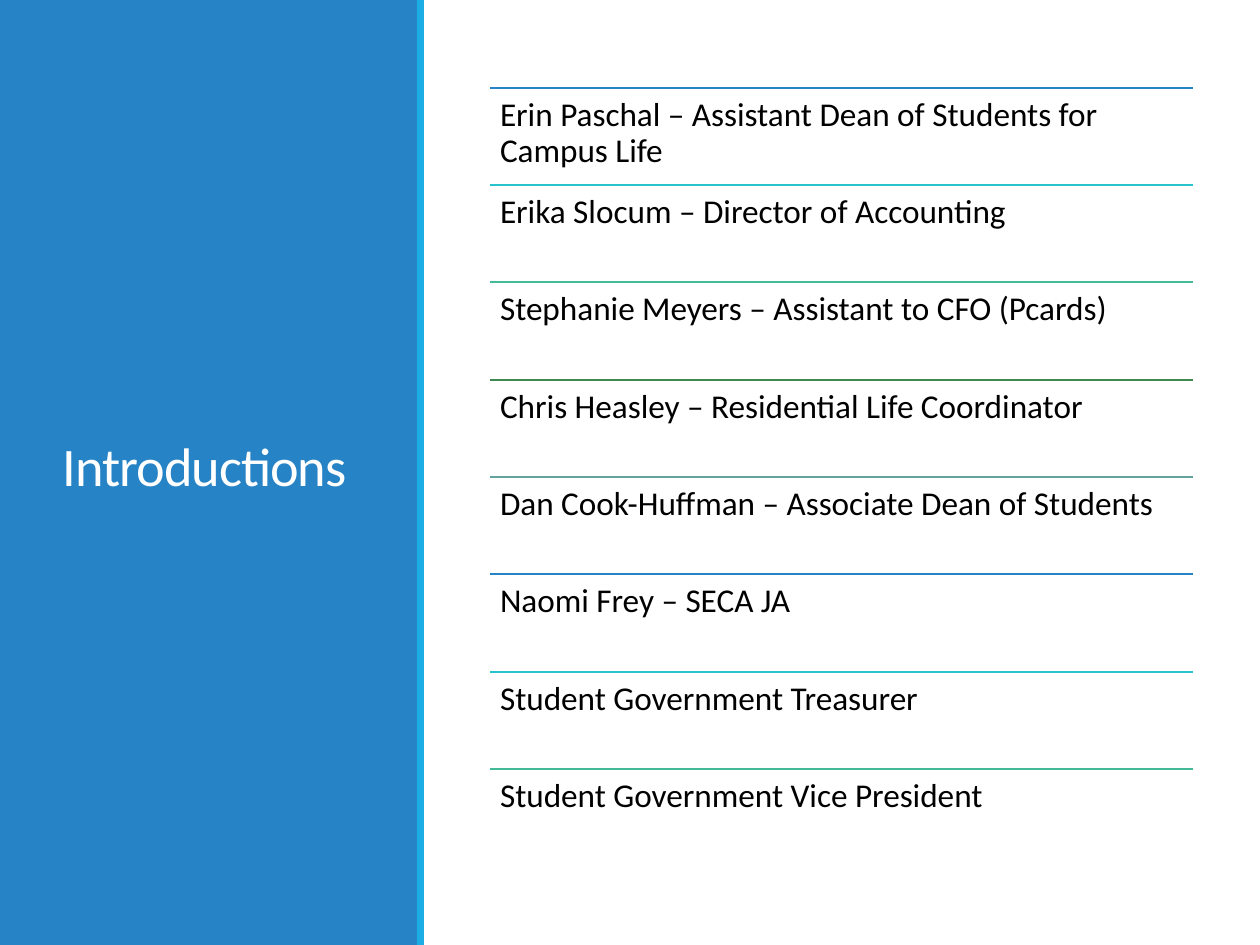
from lxml import etree
from pptx import Presentation
from pptx.dml.color import RGBColor
from pptx.enum.shapes import MSO_CONNECTOR, MSO_SHAPE
from pptx.enum.text import MSO_ANCHOR
from pptx.oxml.ns import qn
from pptx.util import Pt

RECTANGLE = MSO_SHAPE.RECTANGLE
STRAIGHT = MSO_CONNECTOR.STRAIGHT
TOP = MSO_ANCHOR.TOP
MIDDLE = MSO_ANCHOR.MIDDLE

PX = 914400 // 126
SLIDE_WIDTH, SLIDE_HEIGHT = 1260, 945
LIST_LEFT, LIST_TOP, LIST_WIDTH, LIST_HEIGHT = 490, 88, 703, 779

THEME = {
    "font": "Calibri",
    "title_size": Pt(31),
    "person_size": Pt(19),
    "rule_width": Pt(1.25),
    "panel": RGBColor.from_string("2683C6"),
    "stripe": RGBColor.from_string("1CADE4"),
    "title": RGBColor.from_string("FFFFFF"),
    "person": RGBColor.from_string("000000"),
    "rules": [RGBColor.from_string(code)
              for code in ("2683C6", "28C4CC", "42BA97", "3E8853", "62A39F")],
}

PEOPLE = [
    "Erin Paschal – Assistant Dean of Students for Campus Life",
    "Erika Slocum – Director of Accounting",
    "Stephanie Meyers – Assistant to CFO (Pcards)",
    "Chris Heasley – Residential Life Coordinator",
    "Dan Cook-Huffman – Associate Dean of Students",
    "Naomi Frey – SECA JA",
    "Student Government Treasurer",
    "Student Government Vice President",
]


def add_text(shapes, text, box, role, line_spacing, anchor):
    text_box = shapes.add_textbox(*(length * PX for length in box))
    frame = text_box.text_frame
    frame.word_wrap = True
    frame.vertical_anchor = anchor
    paragraph = frame.paragraphs[0]
    paragraph.text = text
    paragraph.line_spacing = line_spacing
    paragraph.font.name = THEME["font"]
    paragraph.font.size = THEME[role + "_size"]
    paragraph.font.color.rgb = THEME[role]
    return frame


presentation = Presentation()
presentation.slide_width = SLIDE_WIDTH * PX
presentation.slide_height = SLIDE_HEIGHT * PX
slide = presentation.slides.add_slide(presentation.slide_layouts[6])

for left, width, role in ((0, 418, "panel"), (417, 7, "stripe")):
    shape = slide.shapes.add_shape(RECTANGLE, left * PX, 0, width * PX, SLIDE_HEIGHT * PX)
    shape.shadow.inherit = False
    shape.fill.solid()
    shape.fill.fore_color.rgb = THEME[role]
    shape.line.fill.background()

title = add_text(slide.shapes, "Introductions", (50, 72, 319, 795), "title", 0.85, MIDDLE)
title.paragraphs[0].runs[0].font._element.set("spc", "-50")

people_group = slide.shapes.add_group_shape()
row_height = LIST_HEIGHT // len(PEOPLE)
for index, person in enumerate(PEOPLE):
    top = LIST_TOP + LIST_HEIGHT * index // len(PEOPLE)
    rule = people_group.shapes.add_connector(
        STRAIGHT, LIST_LEFT * PX, top * PX, (LIST_LEFT + LIST_WIDTH) * PX, top * PX)
    rule.line.color.rgb = THEME["rules"][index % len(THEME["rules"])]
    rule.line.width = THEME["rule_width"]
    etree.SubElement(rule._element.spPr, qn("a:effectLst"))

    frame = add_text(people_group.shapes, person,
                     (LIST_LEFT, top, LIST_WIDTH, row_height), "person", 0.9, TOP)
    frame.margin_left = frame.margin_right = 10 * PX
    frame.margin_top = frame.margin_bottom = 10 * PX

presentation.save("out.pptx")
